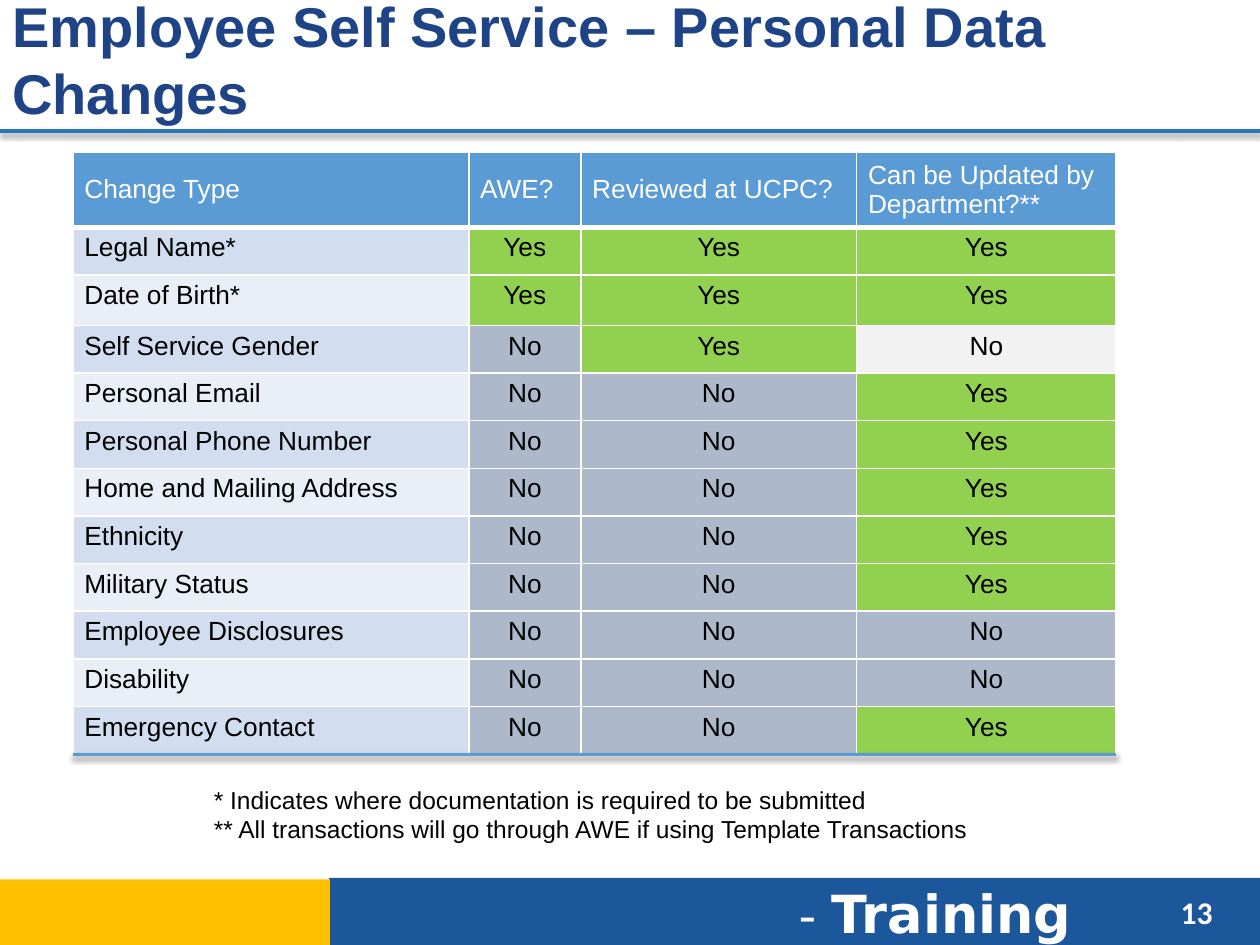
from dataclasses import dataclass

from lxml import etree
from pptx import Presentation
from pptx.dml.color import RGBColor
from pptx.enum.shapes import MSO_CONNECTOR, MSO_SHAPE
from pptx.enum.text import MSO_ANCHOR, PP_ALIGN
from pptx.oxml.ns import qn
from pptx.util import Cm, Pt

STRAIGHT = MSO_CONNECTOR.STRAIGHT
RECTANGLE = MSO_SHAPE.RECTANGLE
TOP, MIDDLE = MSO_ANCHOR.TOP, MSO_ANCHOR.MIDDLE
LEFT, CENTER = PP_ALIGN.LEFT, PP_ALIGN.CENTER

WHITE, BLACK = "FFFFFF", "000000"
HEADER_BLUE, YES_GREEN, NO_GREY, PALE_GREY = "5B9BD5", "92D050", "ADB9CA", "F2F2F2"
BANDS = ("D2DEEF", "EAEFF7")
ANSWER_FILLS = {"Yes": YES_GREEN, "No": NO_GREY}
FILL_EXCEPTIONS = {("Self Service Gender", 3): PALE_GREY}

HEADERS = ("Change Type", "AWE?", "Reviewed at UCPC?", "Can be Updated by Department?**")
CHANGES = (
    ("Legal Name*", "Yes", "Yes", "Yes"),
    ("Date of Birth*", "Yes", "Yes", "Yes"),
    ("Self Service Gender", "No", "Yes", "No"),
    ("Personal Email", "No", "No", "Yes"),
    ("Personal Phone Number", "No", "No", "Yes"),
    ("Home and Mailing Address", "No", "No", "Yes"),
    ("Ethnicity", "No", "No", "Yes"),
    ("Military Status", "No", "No", "Yes"),
    ("Employee Disclosures", "No", "No", "No"),
    ("Disability", "No", "No", "No"),
    ("Emergency Contact", "No", "No", "Yes"),
)
COLUMN_WIDTHS = (7.98, 2.26, 5.56, 5.23)
ROW_HEIGHTS = (1.5, 0.96, 1.02) + (0.96,) * 9
TABLE_LEFT, TABLE_TOP = 1.47, 3.07


@dataclass
class Area:
    left: float
    top: float
    width: float
    height: float

    def lengths(self) -> tuple:
        return Cm(self.left), Cm(self.top), Cm(self.width), Cm(self.height)


@dataclass
class Span:
    text: str
    size: float
    font: str
    color: str
    bold: bool = False


def rgb(color: str) -> RGBColor:
    return RGBColor.from_string(color)


def add_span(para, span: Span) -> None:
    run = para.add_run()
    run.text = span.text
    run.font.size = Pt(span.size)
    run.font.name = span.font
    run.font.bold = span.bold
    run.font.color.rgb = rgb(span.color)


def add_text(page, area: Area, lines: list[list[Span]], anchor=TOP) -> None:
    frame = page.shapes.add_textbox(*area.lengths()).text_frame
    frame.word_wrap = True
    frame.vertical_anchor = anchor
    para = frame.paragraphs[0]
    for index, spans in enumerate(lines):
        if index:
            para.add_line_break()
        for span in spans:
            add_span(para, span)


def add_bar(page, area: Area, color: str) -> None:
    bar = page.shapes.add_shape(RECTANGLE, *area.lengths())
    bar.shadow.inherit = False
    bar.fill.solid()
    bar.fill.fore_color.rgb = rgb(color)
    bar.line.fill.background()


def add_rule(page, left: float, right: float, top: float, color: str, weight: float) -> None:
    rule = page.shapes.add_connector(STRAIGHT, Cm(left), Cm(top), Cm(right), Cm(top))
    rule.line.color.rgb = rgb(color)
    rule.line.width = Pt(weight)
    effects = etree.SubElement(rule._element.spPr, qn("a:effectLst"))
    shadow = etree.SubElement(
        effects, qn("a:outerShdw"), blurRad=str(Pt(3.1)), dist=str(Pt(1.6)),
        dir="5400000", rotWithShape="0",
    )
    shade = etree.SubElement(shadow, qn("a:srgbClr"), val=BLACK)
    etree.SubElement(shade, qn("a:alpha"), val="38000")


def add_borders(cell, bottom_weight: float) -> None:
    properties = cell._tc.get_or_add_tcPr()
    for side, weight in (("L", 1), ("R", 1), ("T", 1), ("B", bottom_weight)):
        edge = etree.SubElement(properties, qn(f"a:ln{side}"), w=str(Pt(weight)))
        fill = etree.SubElement(edge, qn("a:solidFill"))
        etree.SubElement(fill, qn("a:srgbClr"), val=WHITE)


def fill_cell(cell, text: str, fill: str, color: str, align, anchor, bottom_weight: float) -> None:
    add_borders(cell, bottom_weight)
    cell.fill.solid()
    cell.fill.fore_color.rgb = rgb(fill)
    cell.vertical_anchor = anchor
    cell.margin_left = cell.margin_right = Cm(0.23)
    cell.margin_top = cell.margin_bottom = Cm(0.12)
    para = cell.text_frame.paragraphs[0]
    para.alignment = align
    add_span(para, Span(text, 15, "Arial", color))


def add_changes_table(page) -> None:
    area = Area(TABLE_LEFT, TABLE_TOP, sum(COLUMN_WIDTHS), sum(ROW_HEIGHTS))
    table = page.shapes.add_table(len(ROW_HEIGHTS), len(COLUMN_WIDTHS), *area.lengths()).table
    table.first_row = table.horz_banding = False
    for column, width in zip(table.columns, COLUMN_WIDTHS):
        column.width = Cm(width)
    for row, height in zip(table.rows, ROW_HEIGHTS):
        row.height = Cm(height)
    for column, header in enumerate(HEADERS):
        fill_cell(table.cell(0, column), header, HEADER_BLUE, WHITE, LEFT, MIDDLE, 3)
    for index, change in enumerate(CHANGES):
        for column, text in enumerate(change):
            fill = ANSWER_FILLS[text] if column else BANDS[index % 2]
            fill = FILL_EXCEPTIONS.get((change[0], column), fill)
            align = CENTER if column else LEFT
            fill_cell(table.cell(index + 1, column), text, fill, BLACK, align, TOP, 1)


def main() -> None:
    deck = Presentation()
    deck.slide_width, deck.slide_height = Cm(25.4), Cm(19.05)
    page = deck.slides.add_slide(deck.slide_layouts[6])

    add_bar(page, Area(6.63, 17.7, 18.77, 1.4), "1D579B")
    add_text(page, Area(15.85, 17.63, 7.11, 1.55), [[
        Span("- ", 28, "DejaVu Sans", WHITE),
        Span("Training", 30, "DejaVu Sans", WHITE, True),
    ]])
    add_rule(page, 0, 25.4, 2.64, "2E75B5", 2.25)
    add_text(page, Area(23.55, 17.88, 1.52, 1.02), [[Span("13", 18, "Calibri", WHITE, True)]])
    add_bar(page, Area(-0.03, 17.73, 6.68, 1.4), "FFC000")

    title = Span("Employee Self Service – Personal Data Changes", 32, "Arial", "1E4386", True)
    add_text(page, Area(0, -0.15, 25.4, 2.67), [[title]], MIDDLE)
    add_changes_table(page)
    notes = (
        "* Indicates where documentation is required to be submitted",
        "** All transactions will go through AWE if using Template Transactions",
    )
    add_text(page, Area(4.06, 15.7, 15.85, 1.45), [[Span(note, 14, "Arial", BLACK)] for note in notes])
    add_rule(page, TABLE_LEFT, TABLE_LEFT + sum(COLUMN_WIDTHS), 15.21, HEADER_BLUE, 2)

    deck.save("out.pptx")


if __name__ == "__main__":
    main()
